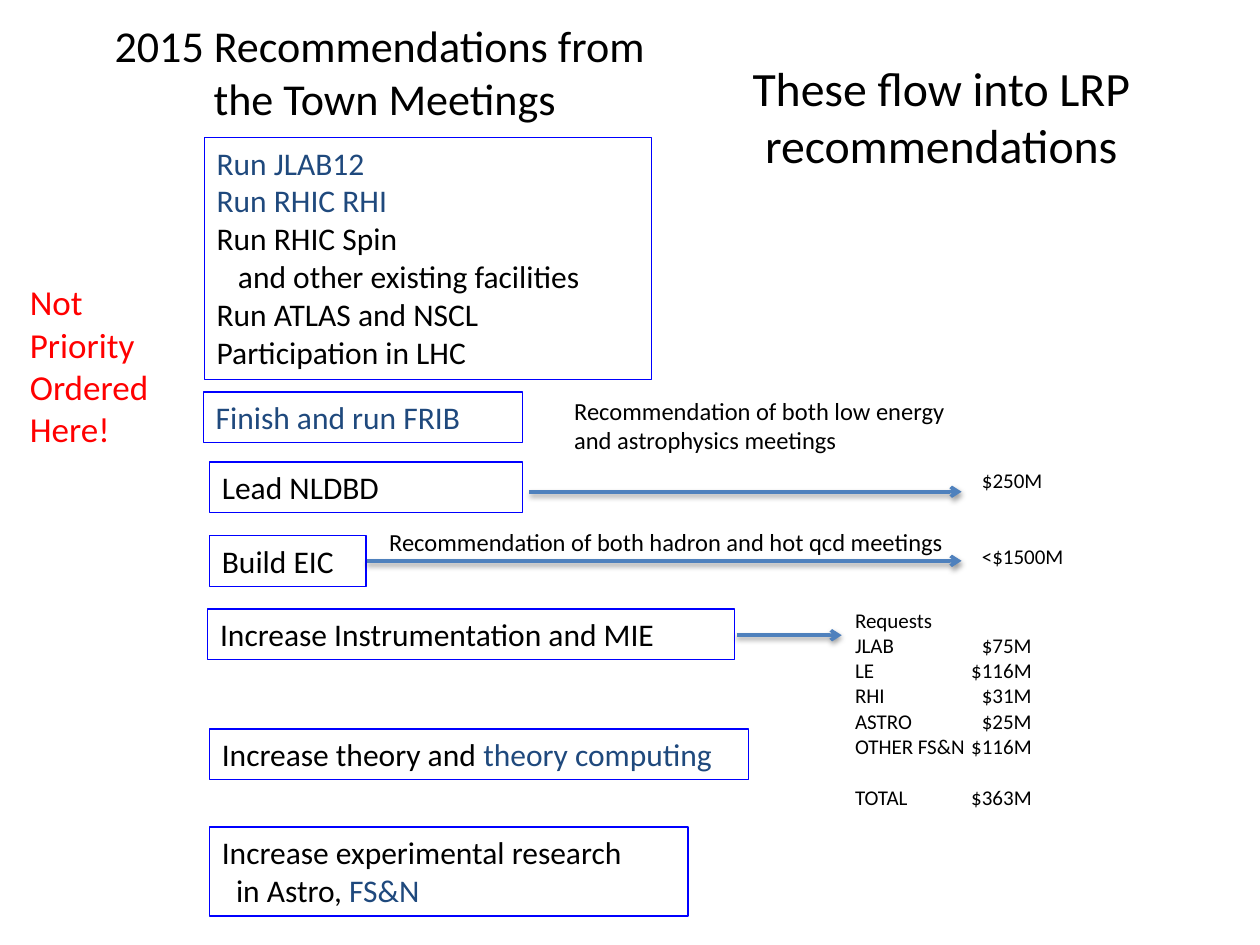
from dataclasses import dataclass

from lxml.etree import SubElement
from pptx import Presentation
from pptx.dml.color import RGBColor
from pptx.enum.shapes import MSO_CONNECTOR as Connector, MSO_SHAPE as Preset
from pptx.enum.text import MSO_ANCHOR as Anchor, MSO_AUTO_SIZE as AutoSize, PP_ALIGN as Align
from pptx.oxml.ns import qn
from pptx.util import Pt


@dataclass(frozen=True)
class Theme:
    font: str = "Calibri"
    ink: str = "000000"
    accent: str = "1F497D"
    warning: str = "FF0000"
    frame: str = "0000FF"
    arrow: str = "4F81BD"
    title: float = 25.2
    heading: float = 27.3
    warning_size: float = 20
    item: float = 18
    comment: float = 14
    amount: float = 12


THEME = Theme()


@dataclass(frozen=True)
class Line:
    """One paragraph; colored_texts holds (text, colour) pairs."""
    colored_texts: tuple
    indent: float = 0
    before: float = 0
    right_tab: float = 0


def line(text, color=THEME.ink, **layout):
    return Line(((text, color),), **layout)


def write(shape, lines, size, align=Align.LEFT, anchor=Anchor.TOP, wrap=True):
    frame = shape.text_frame
    frame.word_wrap = wrap
    frame.auto_size = AutoSize.NONE
    frame.vertical_anchor = anchor
    for index, item in enumerate(lines):
        paragraph = frame.add_paragraph() if index else frame.paragraphs[0]
        paragraph.alignment = align
        paragraph.space_before = Pt(item.before)
        properties = paragraph._p.get_or_add_pPr()
        if item.indent:
            properties.set("marL", str(Pt(item.indent)))
        if item.right_tab:
            tabs = SubElement(properties, qn("a:tabLst"))
            SubElement(tabs, qn("a:tab"), pos=str(Pt(item.right_tab)), algn="r")
        for text, color in item.colored_texts:
            for row, piece in enumerate(text.split("\n")):
                if row:
                    paragraph.add_line_break()
                run = paragraph.add_run()
                run.text = piece
                run.font.name = THEME.font
                run.font.size = Pt(size)
                run.font.color.rgb = RGBColor.from_string(color)


def add_text(slide, box, lines, **text_format):
    shape = slide.shapes.add_textbox(*map(Pt, box))
    write(shape, lines, **text_format)


def add_title(slide, box, text):
    title = slide.shapes.title
    title.left, title.top, title.width, title.height = map(Pt, box)
    write(title, [line(text)], size=THEME.title, align=Align.CENTER, anchor=Anchor.MIDDLE)


def add_framed_item(slide, box, lines):
    shape = slide.shapes.add_shape(Preset.RECTANGLE, *map(Pt, box))
    shape.shadow.inherit = False
    shape.fill.background()
    shape.line.color.rgb = RGBColor.from_string(THEME.frame)
    shape.line.width = Pt(0.75)
    write(shape, lines, size=THEME.item)


def add_arrow(slide, left, right, y):
    """Draw a horizontal arrow with a soft shadow below it."""
    arrow = slide.shapes.add_connector(Connector.STRAIGHT, Pt(left), Pt(y), Pt(right), Pt(y))
    arrow.line.color.rgb = RGBColor.from_string(THEME.arrow)
    arrow.line.width = Pt(2)
    SubElement(arrow.line._get_or_add_ln(), qn("a:tailEnd"), type="arrow")
    effects = SubElement(arrow._element.spPr, qn("a:effectLst"))
    shadow = SubElement(effects, qn("a:outerShdw"), blurRad=str(Pt(3.1)), dist=str(Pt(1.6)),
                        dir="5400000", rotWithShape="0")
    color = SubElement(shadow, qn("a:srgbClr"), val=THEME.ink)
    SubElement(color, qn("a:alpha"), val="38000")


def add_recommendations(slide, left, top):
    """Stack the framed items; offsets and sizes are relative to left and top."""
    accent = THEME.accent
    single = 29
    items = [
        (0, 0, 255.5, 138.5, [
            line("Run JLAB12", accent),
            line("Run RHIC RHI", accent),
            line("Run RHIC Spin"),
            line("and other existing facilities", indent=12.2),
            line("Run ATLAS and NSCL"),
            line("Participation in LHC"),
        ]),
        (-0.5, 145.5, 182.5, single, [line("Finish and run FRIB", accent)]),
        (3, 185.5, 179, single, [line("Lead NLDBD")]),
        (3, 227.5, 89.5, single, [line("Build EIC")]),
        (2, 269.5, 301, single, [line("Increase Instrumentation and MIE")]),
        (3, 338, 308, single, [
            Line((("Increase theory and ", THEME.ink), ("theory computing", accent)))]),
        (3, 394, 273.5, 51, [
            line("Increase experimental research"),
            Line((("in Astro, ", THEME.ink), ("FS&N", accent)), indent=8.1),
        ]),
    ]
    for x, y, width, height, lines in items:
        add_framed_item(slide, (left + x, top + y, width, height), lines)


def add_requests(slide, box):
    requests = [("JLAB", "$75M"), ("LE", "$116M"), ("RHI", "$31M"),
                ("ASTRO", "$25M"), ("OTHER FS&N", "$116M")]
    tab = 101
    lines = [line("Requests")]
    lines += [line(f"{name}\t{amount}", right_tab=tab) for name, amount in requests]
    lines.append(line("TOTAL\t$363M", right_tab=tab, before=14.6))
    add_text(slide, box, lines, size=THEME.amount)


def add_costs(slide, box):
    lines = [line("$250M", indent=60), line("<$1500M", indent=60, before=29.2)]
    add_text(slide, box, lines, size=THEME.amount)


def add_comments(slide):
    add_text(slide, (215.3, 297.5, 334, 24.5),
             [line("Recommendation of both hadron and hot qcd meetings")],
             size=THEME.comment, wrap=False)
    add_text(slide, (321, 222.5, 229, 41),
             [line("Recommendation of both low energy"), line("and astrophysics meetings")],
             size=THEME.comment, wrap=False)
    add_text(slide, (10, 157, 83.5, 104.5),
             [line(word, THEME.warning) for word in ("Not", "Priority", "Ordered", "Here!")],
             size=THEME.warning_size, wrap=False)


def main():
    presentation = Presentation()
    presentation.slide_width, presentation.slide_height = Pt(720), Pt(540)
    slide = presentation.slides.add_slide(presentation.slide_layouts[5])
    add_title(slide, (46, 11.5, 342, 59), "2015 Recommendations from\n the Town Meetings")
    add_recommendations(slide, left=116.7, top=78.5)
    add_text(slide, (369.4, 19.5, 337, 93.5), [line("These flow into LRP recommendations")],
             size=THEME.heading, align=Align.CENTER, anchor=Anchor.MIDDLE)
    add_requests(slide, (481.5, 343.5, 178, 124))
    add_costs(slide, (494, 263.5, 178, 65.5))
    for left, right, y in [(421, 481, 363), (302.5, 549.5, 281), (209.5, 549.5, 320.5)]:
        add_arrow(slide, left, right, y)
    add_comments(slide)
    presentation.save("out.pptx")


if __name__ == "__main__":
    main()
